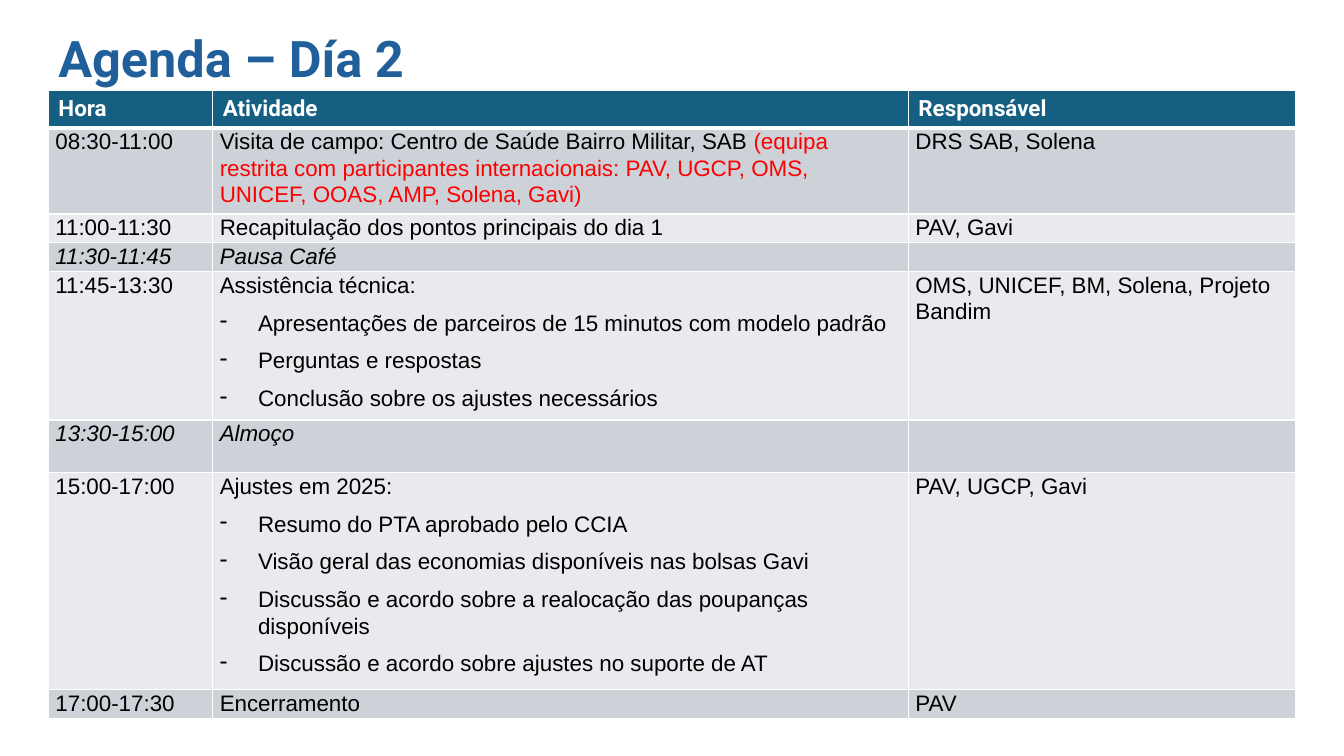
from lxml.etree import SubElement
from pptx import Presentation
from pptx.dml.color import RGBColor
from pptx.enum.text import MSO_ANCHOR
from pptx.oxml.ns import qn
from pptx.util import Inches, Pt

WIDTH, HEIGHT = 13.33, 7.5
TITLE_BOX = (0.48, -0.12, 11.5, 1.45)
AGENDA_BOX = (0.48, 0.9, 12.37, 5.87)
COLUMN_WIDTHS = (1.63, 6.9, 3.84)
ROW_HEIGHTS = (0.36, 0.79, 0.26, 0.26, 1.39, 0.52, 2.03, 0.26)
TEXT_SIZE = 16
INDENT = 0.38
BLACK, RED, WHITE = "000000", "FF0000", "FFFFFF"
TITLE_BLUE, HEADER_TEAL = "215F9A", "156082"
BANDS = ("CCD2D8", "E8EAED")

HEADINGS = ("Hora", "Atividade", "Responsável")
SESSIONS = (
    ("08:30-11:00", "Visita de campo: Centro de Saúde Bairro Militar, SAB ", "DRS SAB, Solena",
     {"note": "(equipa restrita com participantes internacionais: "
              "PAV, UGCP, OMS, UNICEF, OOAS, AMP, Solena, Gavi)"}),
    ("11:00-11:30", "Recapitulação dos pontos principais do dia 1", "PAV, Gavi", {}),
    ("11:30-11:45", "Pausa Café", "", {"italic": True}),
    ("11:45-13:30", "Assistência técnica:", "OMS, UNICEF, BM, Solena, Projeto Bandim",
     {"points": ("Apresentações de parceiros de 15 minutos com modelo padrão",
                 "Perguntas e respostas",
                 "Conclusão sobre os ajustes necessários")}),
    ("13:30-15:00", "Almoço", "", {"italic": True}),
    ("15:00-17:00", "Ajustes em 2025:", "PAV, UGCP, Gavi",
     {"points": ("Resumo do PTA aprobado pelo CCIA",
                 "Visão geral das economias disponíveis nas bolsas Gavi",
                 "Discussão e acordo sobre a realocação das poupanças disponíveis",
                 "Discussão e acordo sobre ajustes no suporte de AT")}),
    ("17:00-17:30", "Encerramento", "PAV", {}),
)


def paint(target, color):
    """Give a font or a fill a solid colour from a hex string."""
    if hasattr(target, "solid"):
        target.solid()
        target.fore_color.rgb = RGBColor.from_string(color)
    else:
        target.color.rgb = RGBColor.from_string(color)


def add_span(para, text, color=BLACK, size=TEXT_SIZE, name="Arial", bold=False, italic=False):
    """Add one formatted run to a paragraph."""
    span = para.add_run()
    span.text = text
    font = span.font
    font.name, font.size, font.bold, font.italic = name, Pt(size), bold, italic
    paint(font, color)


def space_body(para):
    """Apply the line and paragraph spacing of the agenda body."""
    para.line_spacing = 1.07
    para.space_after = Pt(8)


def add_point(frame, text):
    """Add a dashed paragraph with a hanging indent."""
    para = frame.add_paragraph()
    space_body(para)
    properties = para._p.get_or_add_pPr()
    properties.set("marL", str(Inches(INDENT)))
    properties.set("indent", str(-Inches(INDENT)))
    SubElement(properties, qn("a:buChar"), char="-")
    add_span(para, text)


def dress_cell(cell, fill, bottom=1):
    """Draw white borders around a cell and fill it."""
    properties = cell._tc.get_or_add_tcPr()
    for side, width in (("L", 1), ("R", 1), ("T", 1), ("B", bottom)):
        line = SubElement(properties, qn(f"a:ln{side}"), w=str(Pt(width)))
        solid = SubElement(line, qn("a:solidFill"))
        SubElement(solid, qn("a:srgbClr"), val=WHITE)
    paint(cell.fill, fill)


def fill_session(cells, session, band):
    """Write one agenda session into the cells of its row."""
    *texts, extras = session
    for cell, text in zip(cells, texts):
        dress_cell(cell, band)
        cell.margin_left = cell.margin_right = Inches(0.07)
        cell.margin_top = cell.margin_bottom = 0
        para = cell.text_frame.paragraphs[0]
        space_body(para)
        if text:
            add_span(para, text, italic=extras.get("italic", False))
        else:
            SubElement(para._p, qn("a:endParaRPr"), sz=str(TEXT_SIZE * 100))
    activity = cells[1].text_frame
    if "note" in extras:
        add_span(activity.paragraphs[0], extras["note"], RED)
    for point in extras.get("points", ()):
        add_point(activity, point)


def add_title(page, box, text):
    """Place the slide title in its box."""
    frame = page.shapes.add_textbox(*map(Inches, box)).text_frame
    frame.word_wrap = True
    frame.vertical_anchor = MSO_ANCHOR.MIDDLE
    para = frame.paragraphs[0]
    para.line_spacing = 0.9
    add_span(para, text, TITLE_BLUE, 36, "Roboto", bold=True)


def add_agenda(page, box):
    """Place the agenda table, scaling its columns and rows to the box."""
    left, top, width, height = box
    table = page.shapes.add_table(len(ROW_HEIGHTS), len(COLUMN_WIDTHS),
                                  *map(Inches, box)).table
    for column, share in zip(table.columns, COLUMN_WIDTHS):
        column.width = Inches(width * share / sum(COLUMN_WIDTHS))
    for row, share in zip(table.rows, ROW_HEIGHTS):
        row.height = Inches(height * share / sum(ROW_HEIGHTS))
    header, *body = [list(row.cells) for row in table.rows]
    for cell, heading in zip(header, HEADINGS):
        dress_cell(cell, HEADER_TEAL, bottom=3)
        add_span(cell.text_frame.paragraphs[0], heading, WHITE, name="Roboto", bold=True)
    for index, (cells, session) in enumerate(zip(body, SESSIONS)):
        fill_session(cells, session, BANDS[index % 2])


def main():
    """Build the agenda slide and save it."""
    deck = Presentation()
    deck.slide_width, deck.slide_height = Inches(WIDTH), Inches(HEIGHT)
    page = deck.slides.add_slide(deck.slide_layouts[6])
    add_title(page, TITLE_BOX, "Agenda – Día 2")
    add_agenda(page, AGENDA_BOX)
    deck.save("out.pptx")


if __name__ == "__main__":
    main()
